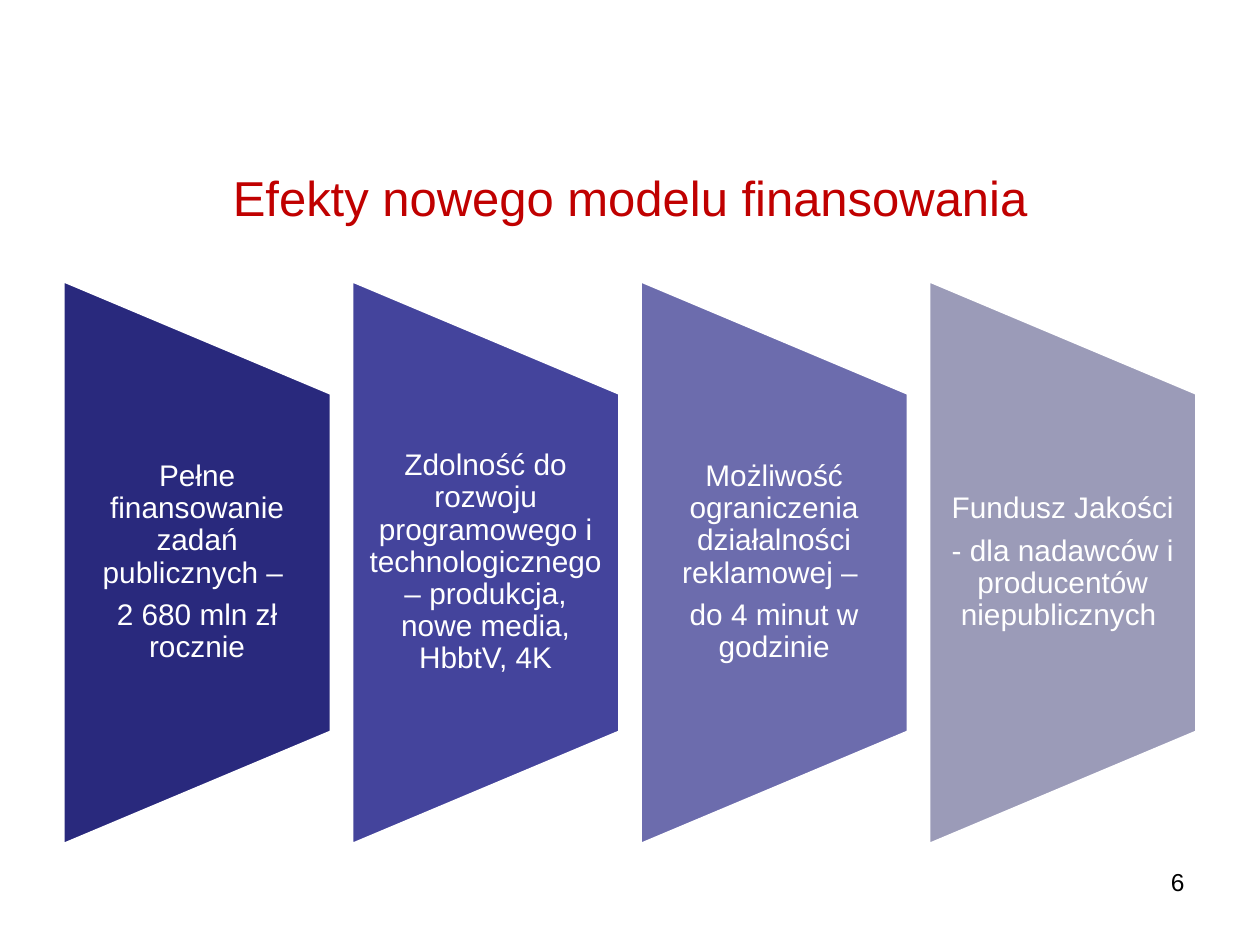
from dataclasses import dataclass

from pptx import Presentation
from pptx.dml.color import RGBColor
from pptx.enum.shapes import MSO_SHAPE
from pptx.enum.text import MSO_ANCHOR, PP_ALIGN
from pptx.util import Inches, Pt


@dataclass(frozen=True)
class Theme:
    font: str = "Arial"
    title: str = "C00000"
    light: str = "FFFFFF"
    dark: str = "000000"
    title_size: int = 28
    effect_size: int = 17
    number_size: int = 14


THEME = Theme()

EFFECTS = [
    ("29297D", ["Pełne finansowanie zadań publicznych – ", "2 680 mln zł rocznie"]),
    ("44449C", ["Zdolność do rozwoju programowego i technologicznego "
                "– produkcja, nowe media, HbbtV, 4K"]),
    ("6C6CAD", ["Możliwość ograniczenia działalności reklamowej – ",
                "do 4 minut w godzinie"]),
    ("9B9BB8", ["Fundusz Jakości", "- dla nadawców i producentów niepublicznych "]),
]

EFFECT_LEFT, EFFECT_PITCH = 0.5, 2.29
EFFECT_WIDTH, EFFECT_HEIGHT = 2.13, 4.48
EFFECT_MIDDLE, LABEL_HEIGHT = 4.465, 2.69


def add_text(slide, box, paragraphs, size, color, align, anchor=MSO_ANCHOR.MIDDLE):
    frame = slide.shapes.add_textbox(*map(Inches, box)).text_frame
    frame.word_wrap = True
    frame.vertical_anchor = anchor
    for index, wording in enumerate(paragraphs):
        paragraph = frame.paragraphs[0] if index == 0 else frame.add_paragraph()
        paragraph.alignment = align
        run = paragraph.add_run()
        run.text = wording
        run.font.name = THEME.font
        run.font.size = Pt(size)
        run.font.color.rgb = RGBColor.from_string(color)
    return frame


def add_panel(slide, left, color):
    turned_left = left + (EFFECT_WIDTH - EFFECT_HEIGHT) / 2
    turned_top = EFFECT_MIDDLE - EFFECT_WIDTH / 2
    panel = slide.shapes.add_shape(
        MSO_SHAPE.FLOWCHART_MANUAL_OPERATION,
        Inches(turned_left), Inches(turned_top),
        Inches(EFFECT_HEIGHT), Inches(EFFECT_WIDTH),
    )
    panel.rotation = 270
    panel.shadow.inherit = False
    panel.fill.solid()
    panel.fill.fore_color.rgb = RGBColor.from_string(color)
    panel.line.color.rgb = RGBColor.from_string(THEME.light)
    panel.line.width = Pt(2)


def add_label(slide, left, paragraphs):
    box = (left, EFFECT_MIDDLE - LABEL_HEIGHT / 2, EFFECT_WIDTH, LABEL_HEIGHT)
    frame = add_text(slide, box, paragraphs, THEME.effect_size, THEME.light,
                     PP_ALIGN.CENTER)
    frame.margin_left = frame.margin_right = Inches(0.12)
    frame.margin_top = frame.margin_bottom = Inches(0)
    for paragraph in frame.paragraphs:
        paragraph.line_spacing = 0.9
        paragraph.space_after = Pt(6)


def main():
    deck = Presentation()
    deck.slide_width, deck.slide_height = Inches(10), Inches(7.5)
    slide = deck.slides.add_slide(deck.slide_layouts[6])
    add_text(slide, (0.5, 0.99, 9, 1.15), ["Efekty nowego modelu finansowania"],
             THEME.title_size, THEME.title, PP_ALIGN.CENTER)
    for index, (color, paragraphs) in enumerate(EFFECTS):
        left = EFFECT_LEFT + index * EFFECT_PITCH
        add_panel(slide, left, color)
        add_label(slide, left, paragraphs)
    add_text(slide, (7.17, 6.83, 2.33, 0.52), ["6"], THEME.number_size,
             THEME.dark, PP_ALIGN.RIGHT, MSO_ANCHOR.TOP)
    deck.save("out.pptx")


if __name__ == "__main__":
    main()
